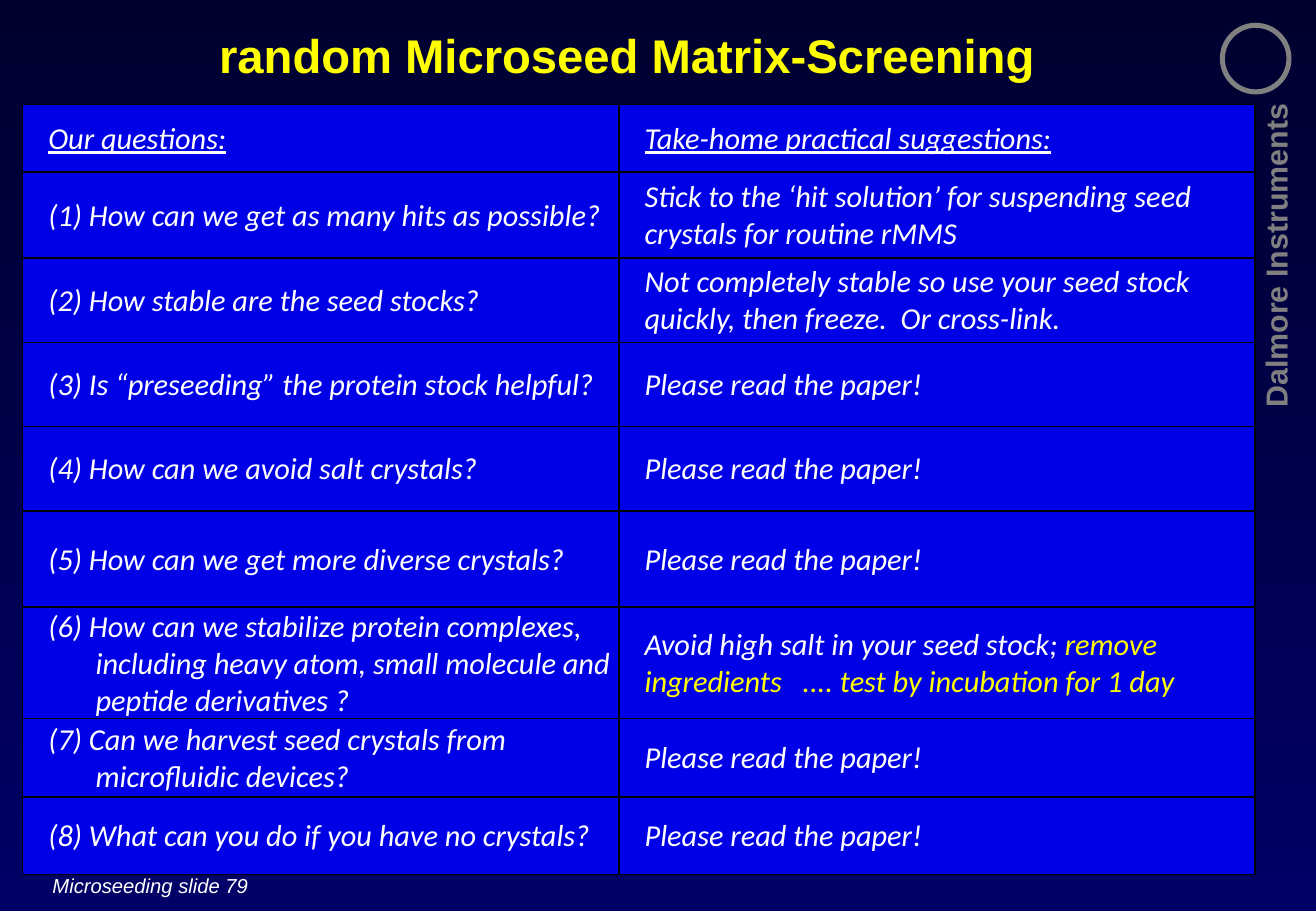
"""Build the table slide on microseeding questions and suggestions."""
from dataclasses import dataclass

from lxml.etree import SubElement
from pptx import Presentation
from pptx.dml.color import RGBColor
from pptx.enum.shapes import MSO_SHAPE
from pptx.enum.text import MSO_ANCHOR, MSO_AUTO_SIZE, PP_ALIGN
from pptx.oxml.ns import qn
from pptx.util import Pt


@dataclass(frozen=True)
class Theme:
    """Hold the colours, fonts and type sizes."""
    top: str = "00002F"
    base: str = "000066"
    cell: str = "0000E6"
    rule: str = "000000"
    text: str = "FFFFFF"
    mark: str = "FFFF00"
    grey: str = "808080"
    head: str = "Arial"
    body: str = "Calibri"
    large: int = 28
    mid: int = 18
    small: int = 12


THEME = Theme()
READ = "Please read the paper!"
ROWS = [
    ("Our questions:", "Take-home practical suggestions:", 40),
    ("(1) How can we get as many hits as possible?",
     "Stick to the ‘hit solution’ for suspending seed crystals for routine rMMS", 51),
    ("(2) How stable are the seed stocks?",
     "Not completely stable so use your seed stock quickly, then freeze.  Or cross-link.", 50),
    ("(3) Is “preseeding” the protein stock helpful?", READ, 50),
    ("(4) How can we avoid salt crystals?", READ, 50),
    ("(5) How can we get more diverse crystals?", READ, 57),
    ("(6) How can we stabilize protein complexes, including heavy atom, "
     "small molecule and peptide derivatives ?",
     ("Avoid high salt in your seed stock; ",
      "remove ingredients   .... test by incubation for 1 day"), 66),
    ("(7) Can we harvest seed crystals from microfluidic devices?", READ, 46.5),
    ("(8) What can you do if you have no crystals?", READ, 46),
]
WIDTHS = (353.5, 377)
INDENTS = ((42.5, -28), (14.4, 0))


def apply(item, values):
    """Set each named attribute of an item."""
    for name, value in values.items():
        setattr(item, name, value)


def place(item, box):
    """Move an item to a box given in points."""
    apply(item, dict(zip(("left", "top", "width", "height"), map(Pt, box))))


def write(par, text, size, color, face, **style):
    """Add one formatted run to a paragraph."""
    run = par.add_run()
    run.text = text
    apply(run.font, {"size": Pt(size), "name": face, **style})
    run.font.color.rgb = RGBColor.from_string(color)


def label(slide, box, text, size, color, align=PP_ALIGN.LEFT, wrap=True, turn=0, **style):
    """Add a text box with one line of text."""
    item = slide.shapes.add_textbox(*map(Pt, box))
    item.rotation = turn
    apply(item.text_frame, {"word_wrap": wrap, "vertical_anchor": MSO_ANCHOR.MIDDLE})
    par = item.text_frame.paragraphs[0]
    par.alignment = align
    write(par, text, size, color, THEME.head, **style)


def paint(slide):
    """Fill the background with a downward gradient."""
    fill = slide.background.fill
    fill.gradient()
    fill.gradient_angle = 270
    for stop, color in zip(fill.gradient_stops, (THEME.top, THEME.base)):
        stop.color.rgb = RGBColor.from_string(color)


def title(slide, box):
    """Write the slide title."""
    item = slide.shapes.title
    place(item, box)
    apply(item.text_frame, {"auto_size": MSO_AUTO_SIZE.NONE, "word_wrap": True,
                            "vertical_anchor": MSO_ANCHOR.MIDDLE})
    par = item.text_frame.paragraphs[0]
    par.alignment = PP_ALIGN.CENTER
    write(par, "random Microseed Matrix-Screening", THEME.large, THEME.mark, THEME.head, bold=True)


def brand(slide, box):
    """Draw a plain ring with the upright name below it."""
    left, top, width, height = box
    size = 39.5
    ring = slide.shapes.add_shape(MSO_SHAPE.OVAL, Pt(left), Pt(top), Pt(size), Pt(size))
    ring.shadow.inherit = False
    ring.fill.background()
    ring.line.color.rgb = RGBColor.from_string(THEME.grey)
    ring.line.width = Pt(3)
    span, deep = height - size, 29
    across = left + width - deep / 2
    down = top + size + span / 2
    label(slide, (across - span / 2, down - deep / 2, span, deep),
          "Dalmore Instruments", THEME.mid, THEME.grey, PP_ALIGN.RIGHT, turn=270, bold=True)


def edge(cell):
    """Draw a thin rule on all sides of a cell."""
    props = cell._tc.get_or_add_tcPr()
    for side in ("a:lnL", "a:lnR", "a:lnT", "a:lnB"):
        line = SubElement(props, qn(side), w=str(Pt(1)))
        SubElement(SubElement(line, qn("a:solidFill")), qn("a:srgbClr"), val=THEME.rule)


def fill(cell, parts, indent, under):
    """Format a cell and write its text parts."""
    edge(cell)
    cell.fill.solid()
    cell.fill.fore_color.rgb = RGBColor.from_string(THEME.cell)
    apply(cell, {"margin_left": Pt(0.7), "margin_right": Pt(0.7), "margin_top": Pt(0.7),
                 "margin_bottom": 0, "vertical_anchor": MSO_ANCHOR.MIDDLE})
    par = cell.text_frame.paragraphs[0]
    props = par._p.get_or_add_pPr()
    for name, value in zip(("marL", "indent"), indent):
        props.set(name, str(Pt(value)))
    for text, color in zip(parts, (THEME.text, THEME.mark)):
        write(par, text, THEME.mid, color, THEME.body, italic=True, underline=under)


def grid(slide, box):
    """Build the table of questions and suggestions."""
    table = slide.shapes.add_table(len(ROWS), len(WIDTHS), *map(Pt, box)).table
    apply(table, {"first_row": False, "horz_banding": False})
    for col, width in zip(table.columns, WIDTHS):
        col.width = Pt(width)
    for num, (row, (*texts, height)) in enumerate(zip(table.rows, ROWS)):
        row.height = Pt(height)
        for cell, text, indent in zip(row.cells, texts, INDENTS):
            parts = (text,) if isinstance(text, str) else text
            fill(cell, parts, indent, num == 0)


def main():
    """Build and save the slide."""
    deck = Presentation()
    apply(deck, {"slide_width": Pt(780), "slide_height": Pt(540)})
    slide = deck.slides.add_slide(deck.slide_layouts[5])
    paint(slide)
    brand(slide, (724.5, 15, 46, 255.5))
    label(slide, (24, 514, 131, 22), "Microseeding slide 79", THEME.small, THEME.text,
          wrap=False, italic=True)
    title(slide, (0, 12, 743, 41))
    grid(slide, (13.5, 62, sum(WIDTHS), sum(row[-1] for row in ROWS)))
    deck.save("out.pptx")


if __name__ == "__main__":
    main()
